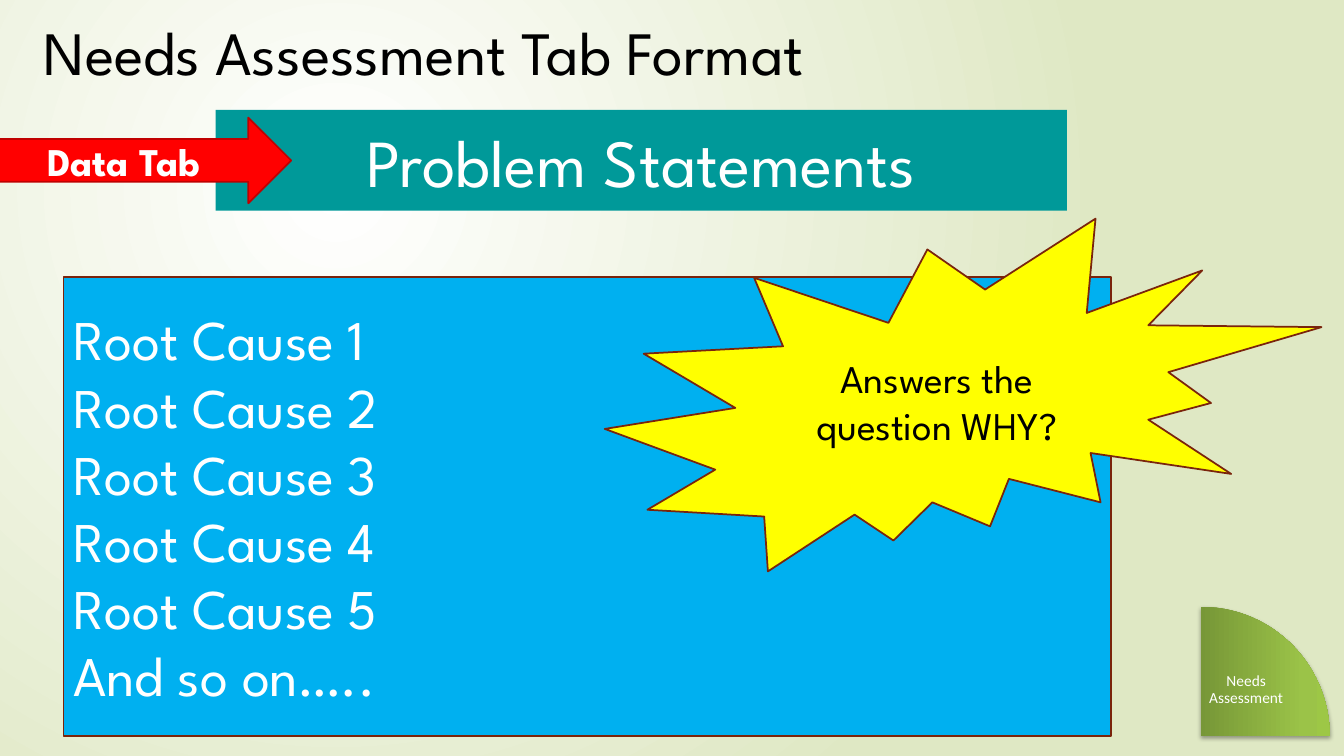
import math
from dataclasses import dataclass

import pptx
import pptx.dml.color
import pptx.enum.shapes
import pptx.enum.text
import pptx.oxml
import pptx.oxml.ns
import pptx.util

Pt = pptx.util.Pt
Shapes = pptx.enum.shapes.MSO_SHAPE
Align = pptx.enum.text.PP_ALIGN
Anchor = pptx.enum.text.MSO_ANCHOR


@dataclass(frozen=True)
class Theme:
    heading_font: str = "League Spartan"
    label_font: str = "Calibri"
    black: str = "000000"
    white: str = "FFFFFF"
    teal: str = "009999"
    red: str = "FF0000"
    dark_red: str = "C00000"
    blue: str = "00B0F0"
    brown: str = "7A240C"
    yellow: str = "FFFF00"
    background: tuple = ((0, "FFFFFF"), (100, "DFE8C4"))
    wedge: tuple = ((0, "779737"), (80, "9BC348"), (100, "9DC746"))
    title_size: float = 44
    banner_size: float = 48
    list_size: float = 40
    callout_size: float = 28
    label_size: float = 11
    line_width: float = 1.25


THEME = Theme()


def rgb(color):
    return pptx.dml.color.RGBColor.from_string(color)


def write_text(shape, text, size, color=THEME.white, font=THEME.heading_font, bold=False,
               align=Align.CENTER, anchor=Anchor.MIDDLE, wrap=True, spacing=None, inset=None):
    """Fill a shape with text, one paragraph a line."""
    frame = shape.text_frame
    frame.text = text
    frame.word_wrap = wrap
    frame.vertical_anchor = anchor
    if inset is not None:
        frame.margin_left = frame.margin_right = Pt(inset)
        frame.margin_top = frame.margin_bottom = Pt(inset)
    for paragraph in frame.paragraphs:
        paragraph.alignment = align
        if spacing:
            paragraph.line_spacing = spacing
        for run in paragraph.runs:
            run.font.name = font
            run.font.size = Pt(size)
            run.font.bold = bold
            run.font.color.rgb = rgb(color)


def add_shape(shapes, kind, box, fill=None, line=None):
    shape = shapes.add_shape(kind, *map(Pt, box))
    shape.shadow.inherit = False
    if fill:
        shape.fill.solid()
        shape.fill.fore_color.rgb = rgb(fill)
    if line:
        shape.line.color.rgb = rgb(line)
        shape.line.width = Pt(THEME.line_width)
    else:
        shape.line.fill.background()
    return shape


def set_gradient(fill, element, stops, direction):
    """Give a fill its colour stops and its direction element."""
    fill.gradient()
    old = element.find(".//" + pptx.oxml.ns.qn("a:gradFill"))
    stop_xml = "".join(f'<a:gs pos="{position * 1000}"><a:srgbClr val="{color}"/></a:gs>'
                       for position, color in stops)
    new = pptx.oxml.parse_xml(
        f'<a:gradFill {pptx.oxml.ns.nsdecls("a")} rotWithShape="1">'
        f'<a:gsLst>{stop_xml}</a:gsLst>{direction}</a:gradFill>')
    old.getparent().replace(old, new)


def add_background(slide):
    set_gradient(slide.background.fill, slide.element, THEME.background,
                 '<a:path path="circle"><a:fillToRect l="50000" t="50000" '
                 'r="100000" b="100000"/></a:path>')


def add_title(slide, box):
    title = slide.shapes.title
    title.left, title.top, title.width, title.height = map(Pt, box)
    write_text(title, "Needs Assessment Tab Format", THEME.title_size, THEME.black,
               align=Align.LEFT, anchor=Anchor.TOP, wrap=False)
    title.text_frame.auto_size = pptx.enum.text.MSO_AUTO_SIZE.SHAPE_TO_FIT_TEXT


def add_banner(slide, box):
    left, top, width, height = box
    banner = add_shape(slide.shapes, Shapes.RECTANGLE, box, THEME.teal)
    write_text(banner, "Problem Statements", THEME.banner_size)
    # Arrow that enters from the slide's left edge
    arrow = add_shape(slide.shapes, Shapes.RIGHT_ARROW,
                      (left - 170, top + 5.5, 224, height * 0.85), THEME.red, THEME.dark_red)
    write_text(arrow, "Data Tab", THEME.callout_size, bold=True)


def add_root_causes(slide, box):
    left, top, width, height = box
    panel = add_shape(slide.shapes, Shapes.RECTANGLE, box, THEME.blue, THEME.brown)
    lines = [f"Root Cause {number}" for number in range(1, 6)] + ["And so on….."]
    write_text(panel, "\n".join(lines), THEME.list_size, align=Align.LEFT)
    # Burst over the panel's top right corner
    burst = add_shape(slide.shapes, Shapes.EXPLOSION2,
                      (left + 386.6, top - 41.8, 512, 252), THEME.yellow, THEME.brown)
    write_text(burst, "Answers the question WHY?", THEME.callout_size, THEME.black)


def add_section_marker(slide, box):
    left, top, size, _ = box
    group = slide.shapes.add_group_shape()
    wedge = add_shape(group.shapes, Shapes.PIE_WEDGE, box)
    wedge.rotation = 90
    properties = wedge.element.spPr
    set_gradient(wedge.fill, properties, THEME.wedge, '<a:lin ang="16200000" scaled="0"/>')
    effects = properties.find(pptx.oxml.ns.qn("a:effectLst"))
    effects.append(pptx.oxml.parse_xml(
        f'<a:outerShdw {pptx.oxml.ns.nsdecls("a")} blurRad="{Pt(3.1)}" dist="{Pt(1.8)}" '
        f'dir="5400000" rotWithShape="0"><a:srgbClr val="{THEME.black}">'
        '<a:alpha val="35000"/></a:srgbClr></a:outerShdw>'))
    # Label in the square that fits inside the quarter circle
    side = size / math.sqrt(2)
    label = group.shapes.add_textbox(Pt(left), Pt(top + size - side), Pt(side), Pt(side))
    write_text(label, "Needs Assessment", THEME.label_size, font=THEME.label_font,
               spacing=0.9, inset=5)


def main():
    presentation = pptx.Presentation()
    presentation.slide_width, presentation.slide_height = Pt(960), Pt(540)
    slide = presentation.slides.add_slide(presentation.slide_layouts[5])
    add_background(slide)
    add_title(slide, (24, 6, 631, 60.5))
    add_banner(slide, (154, 78.5, 608, 72))
    add_root_causes(slide, (45.4, 198, 748, 327.6))
    add_section_marker(slide, (857.6, 433.4, 92.2, 92.2))
    presentation.save("out.pptx")


if __name__ == "__main__":
    main()
